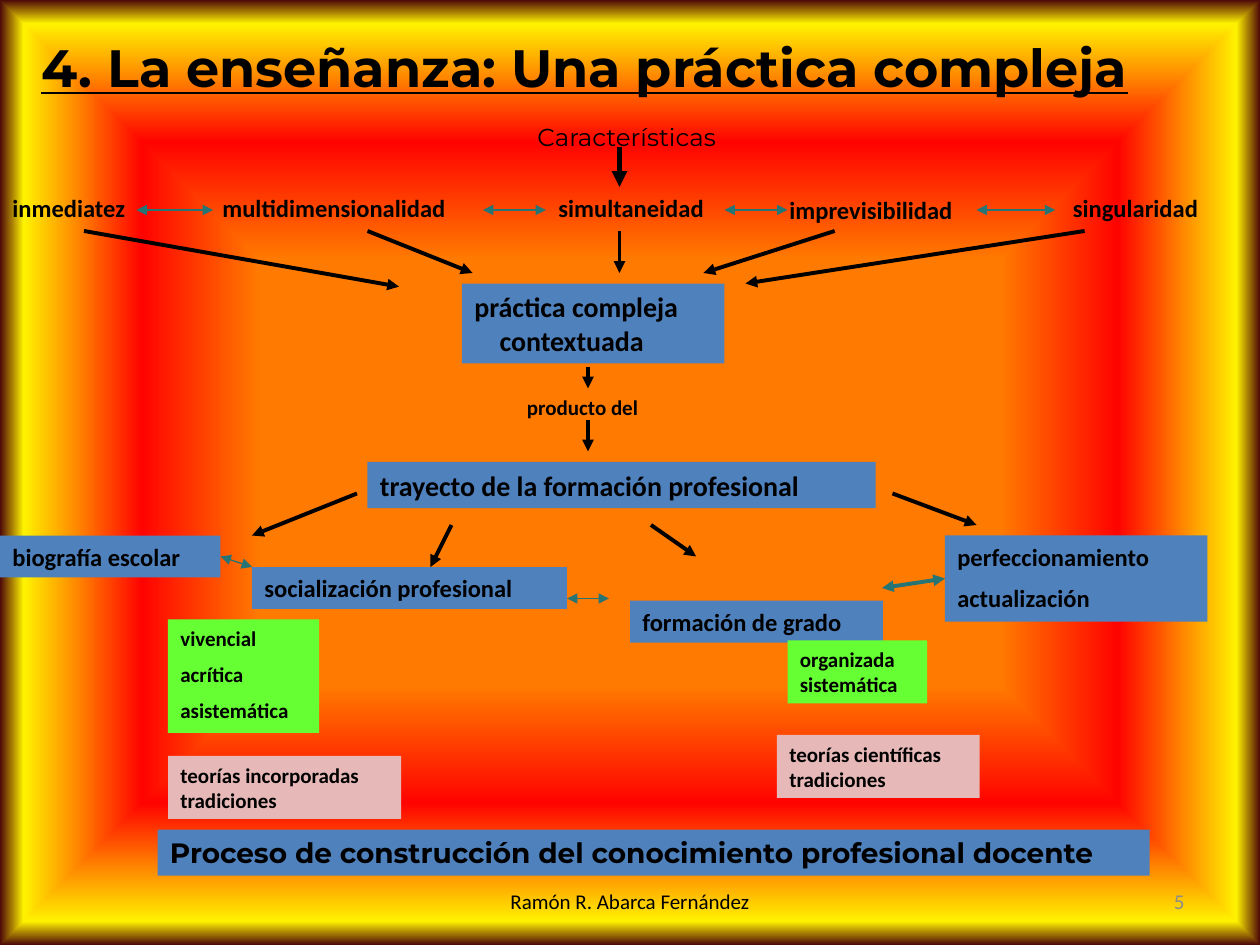
from dataclasses import dataclass
from typing import Optional

from lxml import etree
from pptx import Presentation
from pptx.dml.color import RGBColor
from pptx.enum.shapes import MSO_CONNECTOR, MSO_SHAPE
from pptx.enum.text import MSO_ANCHOR, PP_ALIGN
from pptx.oxml.ns import nsdecls, qn
from pptx.oxml import parse_xml
from pptx.util import Inches, Pt

STRAIGHT, RECT = MSO_CONNECTOR.STRAIGHT, MSO_SHAPE.RECTANGLE
LEFT, CENTER, RIGHT = PP_ALIGN.LEFT, PP_ALIGN.CENTER, PP_ALIGN.RIGHT
TOP, MIDDLE = MSO_ANCHOR.TOP, MSO_ANCHOR.MIDDLE
LEFT_SIDE, RIGHT_SIDE = 1, 3

COLS, ROWS = 120, 90
UNIT = Inches(10) / COLS  # one grid cell, a twelfth of an inch
BLACK, GREY, TEAL = "000000", "8C8C8C", "267474"
BLUE, GREEN, PINK = "4F81BD", "66FF33", "E6B9B8"
GRADIENT = [(0, "FF7A00"), (45, "FF7A00"), (70, "FF0300"), (95, "FFF200"), (100, "4D0808")]


@dataclass
class Box:
    col: float
    row: float
    cols: float
    rows: float
    lines: list[str]
    size: int = 14
    fill: Optional[str] = None
    font: str = "Calibri"
    bold: bool = True
    underline: bool = False
    color: str = BLACK
    align: PP_ALIGN = LEFT
    anchor: MSO_ANCHOR = TOP
    spaced: bool = False
    indent: float = 0  # columns, for the lines after the first


@dataclass
class Arrow:
    start: tuple[float, float]
    end: tuple[float, float]
    color: str = BLACK
    width: float = 2.25
    double: bool = False


def grid(n: float) -> int:
    return round(n * UNIT)


def rgb(color: str) -> RGBColor:
    return RGBColor.from_string(color)


def write(shape, box: Box) -> None:
    tf = shape.text_frame
    tf.word_wrap = True
    tf.vertical_anchor = box.anchor
    tf.margin_left = tf.margin_right = Inches(0.1)
    tf.margin_top = tf.margin_bottom = Inches(0.05)
    for i, line in enumerate(box.lines):
        p = tf.add_paragraph() if i else tf.paragraphs[0]
        p.alignment = box.align
        p.space_before = Pt(box.size / 2 if box.spaced and i else 0)
        if box.indent and i:
            p._p.get_or_add_pPr().set("marL", str(grid(box.indent)))
        r = p.add_run()
        r.text = line
        r.font.name, r.font.size = box.font, Pt(box.size)
        r.font.bold, r.font.underline = box.bold, box.underline
        r.font.color.rgb = rgb(box.color)


def add_box(slide, box: Box):
    area = [grid(n) for n in (box.col, box.row, box.cols, box.rows)]
    if box.fill:
        sp = slide.shapes.add_shape(RECT, *area)
        sp.shadow.inherit = False
        sp.fill.solid()
        sp.fill.fore_color.rgb = rgb(box.fill)
        sp.line.fill.background()
    else:
        sp = slide.shapes.add_textbox(*area)
    write(sp, box)
    return sp


def add_arrow(slide, arrow: Arrow):
    line = slide.shapes.add_connector(STRAIGHT, *map(grid, arrow.start + arrow.end))
    line.line.color.rgb = rgb(arrow.color)
    line.line.width = Pt(arrow.width)
    ln = line.line._get_or_add_ln()
    for end in (["headEnd"] if arrow.double else []) + ["tailEnd"]:
        etree.SubElement(ln, qn(f"a:{end}"), type="triangle")
    etree.SubElement(line._element.spPr, qn("a:effectLst"))
    return line


def link(start: tuple[float, float], end: tuple[float, float], width: float = 0.75) -> Arrow:
    return Arrow(start, end, TEAL, width, double=True)


def set_background(slide) -> None:
    stops = "".join(f'<a:gs pos="{pos * 1000}"><a:srgbClr val="{color}"/></a:gs>'
                    for pos, color in GRADIENT)
    bg = parse_xml(
        f'<p:bg {nsdecls("p", "a")}><p:bgPr><a:gradFill rotWithShape="1">'
        f'<a:gsLst>{stops}</a:gsLst><a:path path="rect">'
        '<a:fillToRect l="50000" t="50000" r="50000" b="50000"/></a:path>'
        '</a:gradFill><a:effectLst/></p:bgPr></p:bg>')
    slide._element.cSld.insert(0, bg)


TITLE = Box(2.75, 2.75, 113, 7.3, ["4. La enseñanza: Una práctica compleja"], 30,
            font="Montserrat", underline=True)

SCHOOL = Box(0, 51, 21, 4, ["biografía escolar"], fill=BLUE)
TRAINING = Box(90, 51, 25, 8.2, ["perfeccionamiento", "actualización"], fill=BLUE, spaced=True)

BOXES = [
    Box(50, 11, 22.5, 4, ["Características"], font="Montserrat", bold=False),
    Box(0, 17.8, 14.4, 4, ["inmediatez"]),
    Box(20, 17.8, 26.3, 4, ["multidimensionalidad"]),
    Box(52, 17.8, 18, 4, ["simultaneidad"]),
    Box(74, 18, 21, 4, ["imprevisibilidad"]),
    Box(101, 17.8, 16.2, 4, ["singularidad"]),
    Box(44, 27, 25, 7.6, ["práctica compleja", "contextuada"], 16, BLUE, indent=2.4),
    Box(49, 37, 13.3, 3.6, ["producto del"], 12),
    Box(35, 44, 48.4, 4.4, ["trayecto de la formación profesional"], 16, BLUE),
    Box(24, 54, 30, 4, ["socialización profesional"], fill=BLUE),
    Box(60, 57.2, 24.1, 4, ["formación de grado"], fill=BLUE),
    Box(16, 59, 14.4, 10.8, ["vivencial", "acrítica", "asistemática"], 12, GREEN, spaced=True),
    Box(75, 61, 13.3, 6, ["organizada", "sistemática"], 12, GREEN),
    Box(16, 72, 22.2, 6, ["teorías incorporadas", "tradiciones"], 12, PINK),
    Box(74, 70, 19.3, 6, ["teorías científicas", "tradiciones"], 12, PINK),
    Box(15, 79, 94.5, 4.4, ["Proceso de construcción del conocimiento profesional docente"],
        16, BLUE, "Montserrat"),
    Box(86, 83.4, 28, 4.8, ["5"], 12, bold=False, color=GREY, align=RIGHT, anchor=MIDDLE),
    Box(41, 83.4, 38, 4.8, ["Ramón R. Abarca Fernández"], 12, bold=False,
        align=CENTER, anchor=MIDDLE),
]

FEATURE_LINKS = [(13, 20.3), (46, 52), (69, 75), (93, 100.5)]
ARROWS = [
    Arrow((59, 14), (59, 17.8), width=3),
    *(link((left, 20), (right, 20)) for left, right in FEATURE_LINKS),
    Arrow((8, 22), (38, 27.3)),
    Arrow((35, 22), (45, 26)),
    Arrow((59, 22), (59, 26)),
    Arrow((79.5, 22), (67, 26)),
    Arrow((103.3, 22), (71, 27)),
    Arrow((56, 35), (56, 37)),
    Arrow((56, 40), (56, 43)),
    Arrow((34, 47), (24, 51)),
    Arrow((43, 50), (41, 54)),
    Arrow((62, 50), (66.3, 53)),
    Arrow((85, 47), (93, 50)),
    link((54, 57), (58, 57)),
]


def main() -> None:
    prs = Presentation()
    prs.slide_width, prs.slide_height = grid(COLS), grid(ROWS)
    slide = prs.slides.add_slide(prs.slide_layouts[5])
    set_background(slide)

    title = slide.shapes.title
    title.left, title.top = grid(TITLE.col), grid(TITLE.row)
    title.width, title.height = grid(TITLE.cols), grid(TITLE.rows)
    write(title, TITLE)

    for box in BOXES:
        add_box(slide, box)
    for arrow in ARROWS:
        add_arrow(slide, arrow)

    school, training = add_box(slide, SCHOOL), add_box(slide, TRAINING)
    add_arrow(slide, link((21, 53), (24, 54))).begin_connect(school, RIGHT_SIDE)
    add_arrow(slide, link((84, 56), (90, 55), 2.25)).end_connect(training, LEFT_SIDE)

    prs.save("out.pptx")


if __name__ == "__main__":
    main()
